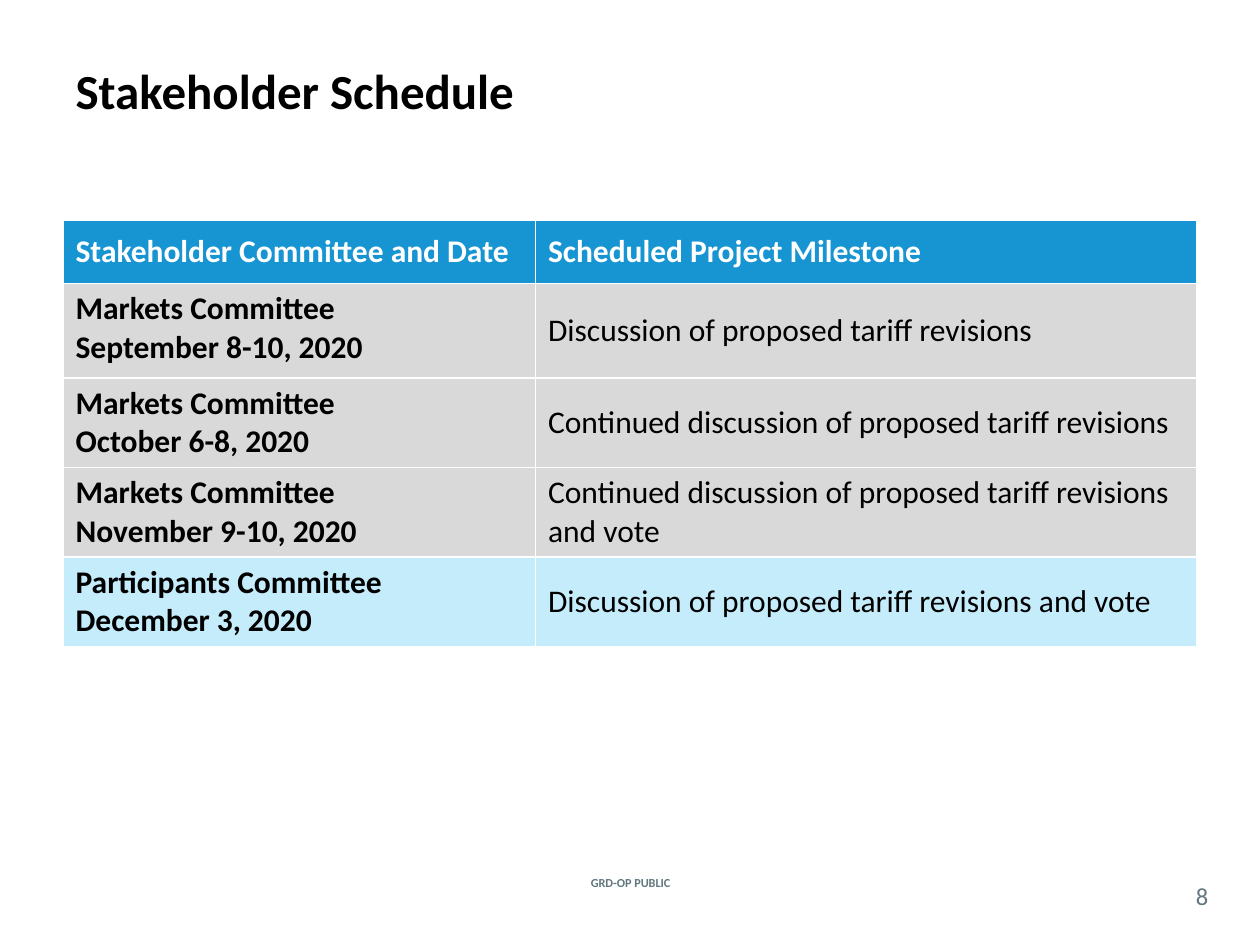
from pptx import Presentation
from pptx.dml.color import RGBColor
from pptx.enum.text import MSO_ANCHOR, PP_ALIGN
from pptx.util import Inches, Pt

FONT = "Calibri"
BLACK = RGBColor(0x00, 0x00, 0x00)
WHITE = RGBColor(0xFF, 0xFF, 0xFF)
SLATE = RGBColor(0x62, 0x77, 0x7F)
BLUE = RGBColor(0x17, 0x95, 0xD2)
GRAY = RGBColor(0xD9, 0xD9, 0xD9)
PALE_BLUE = RGBColor(0xC5, 0xEC, 0xFB)

TITLE = "Stakeholder Schedule"
HEADINGS = ("Stakeholder Committee and Date", "Scheduled Project Milestone")
MEETINGS = [
    ("Markets Committee\nSeptember 8-10, 2020", "Discussion of proposed tariff revisions", GRAY),
    ("Markets Committee\nOctober 6-8, 2020", "Continued discussion of proposed tariff revisions", GRAY),
    ("Markets Committee\nNovember 9-10, 2020", "Continued discussion of proposed tariff revisions and vote", GRAY),
    ("Participants Committee\nDecember 3, 2020", "Discussion of proposed tariff revisions and vote", PALE_BLUE),
]
CLASSIFICATION = "GRD-OP PUBLIC"
PAGE_NUMBER = "8"
COLUMN_WIDTHS = (3.75, 5.25)
ROW_HEIGHTS = (0.5, 0.75, 0.7, 0.7, 0.7)


def write(frame, text, size, color, bold=False, align=PP_ALIGN.LEFT):
    frame.text = text
    frame.word_wrap = True
    for paragraph in frame.paragraphs:
        paragraph.alignment = align
        font = paragraph.font
        font.name, font.size, font.bold = FONT, Pt(size), bold
        font.color.rgb = color


def add_footer(slide, text, box, size, bold=False, inset=None):
    frame = slide.shapes.add_textbox(*map(Inches, box)).text_frame
    write(frame, text, size, SLATE, bold, PP_ALIGN.CENTER)
    frame.vertical_anchor = MSO_ANCHOR.MIDDLE
    if inset is not None:
        frame.margin_left = frame.margin_right = Inches(inset)
        frame.margin_top = frame.margin_bottom = Inches(inset)


def fill_cell(cell, text, fill, color, bold, anchor=MSO_ANCHOR.MIDDLE):
    write(cell.text_frame, text, 18, color, bold)
    cell.vertical_anchor = anchor
    cell.fill.solid()
    cell.fill.fore_color.rgb = fill


def add_schedule(slide):
    schedule = slide.shapes.add_table(
        len(ROW_HEIGHTS), len(COLUMN_WIDTHS), Inches(0.5), Inches(1.75),
        Inches(sum(COLUMN_WIDTHS)), Inches(sum(ROW_HEIGHTS))).table
    schedule.horz_banding = False
    for column, width in zip(schedule.columns, COLUMN_WIDTHS):
        column.width = Inches(width)
    for row, height in zip(schedule.rows, ROW_HEIGHTS):
        row.height = Inches(height)
    for column, heading in enumerate(HEADINGS):
        fill_cell(schedule.cell(0, column), heading, BLUE, WHITE, True)
    for row, (meeting, milestone, fill) in enumerate(MEETINGS, start=1):
        fill_cell(schedule.cell(row, 0), meeting, fill, BLACK, True, MSO_ANCHOR.TOP)
        fill_cell(schedule.cell(row, 1), milestone, fill, BLACK, False)


def main():
    presentation = Presentation()
    presentation.slide_width, presentation.slide_height = Inches(10), Inches(7.5)
    slide = presentation.slides.add_slide(presentation.slide_layouts[5])

    title = slide.shapes.title
    title.left, title.top = Inches(0.5), Inches(0.42)
    title.width, title.height = Inches(9), Inches(0.58)
    write(title.text_frame, TITLE, 28, BLACK, True)
    title.text_frame.vertical_anchor = MSO_ANCHOR.MIDDLE

    add_schedule(slide)
    add_footer(slide, CLASSIFICATION, (4.27, 6.92, 1.47, 0.17), 7, bold=True)
    add_footer(slide, PAGE_NUMBER, (9.33, 6.96, 0.42, 0.29), 14, inset=0)
    presentation.save("out.pptx")


if __name__ == "__main__":
    main()
